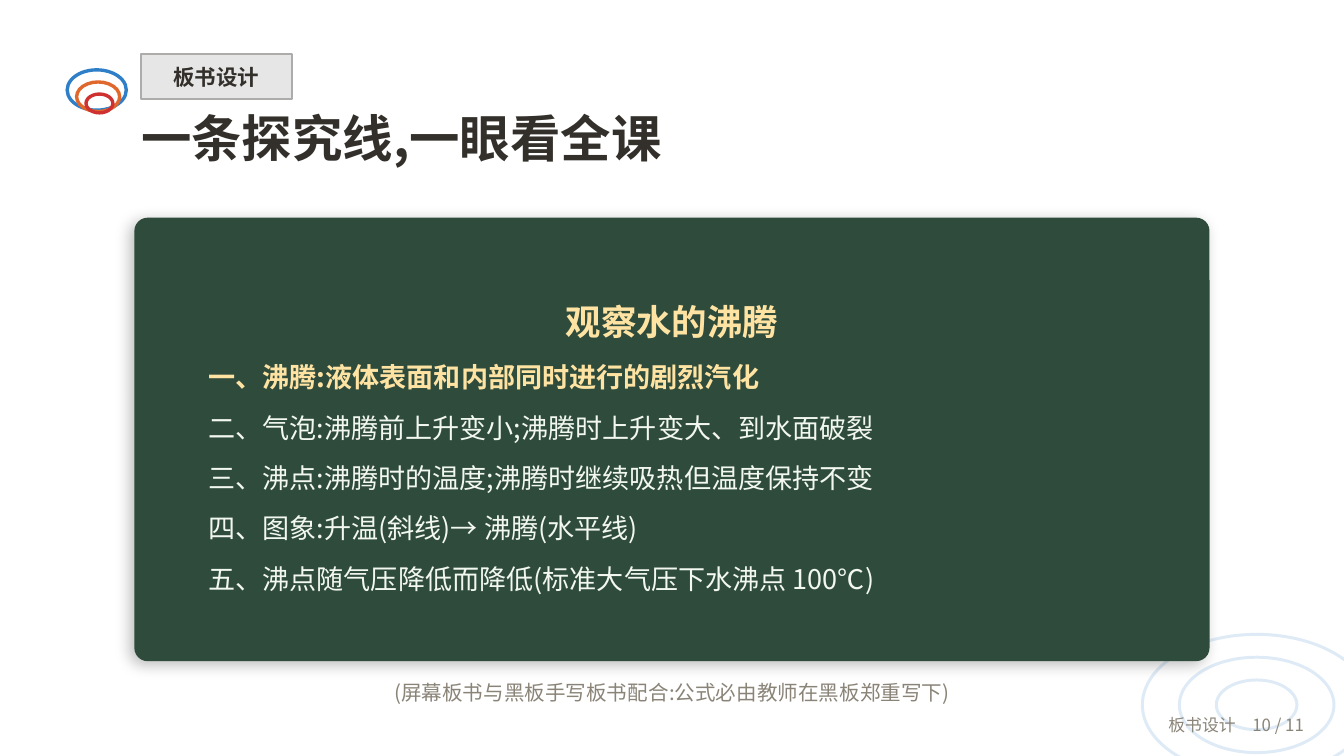
from lxml import etree
from pptx import Presentation
from pptx.dml.color import RGBColor
from pptx.enum.shapes import MSO_SHAPE
from pptx.enum.text import MSO_ANCHOR, MSO_AUTO_SIZE, PP_ALIGN
from pptx.oxml import parse_xml
from pptx.oxml.ns import nsdecls, qn
from pptx.util import Inches, Pt

ELLIPSE, RECTANGLE, ROUNDED = MSO_SHAPE.OVAL, MSO_SHAPE.RECTANGLE, MSO_SHAPE.ROUNDED_RECTANGLE
TOP, MIDDLE = MSO_ANCHOR.TOP, MSO_ANCHOR.MIDDLE
LEFT, CENTER, RIGHT = PP_ALIGN.LEFT, PP_ALIGN.CENTER, PP_ALIGN.RIGHT
NO_AUTOFIT = MSO_AUTO_SIZE.NONE

FONT = "Noto Sans CJK SC"
INK = RGBColor(0x33, 0x30, 0x2B)
MUTED = RGBColor(0x8A, 0x84, 0x78)
TAG_FILL = RGBColor(0xE7, 0xE6, 0xE6)
TAG_LINE = RGBColor(0xAD, 0xAC, 0xAA)
BOARD_GREEN = RGBColor(0x2E, 0x4B, 0x3C)
CHALK_YELLOW = RGBColor(0xFF, 0xE3, 0xA3)
CHALK_WHITE = RGBColor(0xF2, 0xF7, 0xF0)
PALE_BLUE = RGBColor(0xDE, 0xEB, 0xF6)
BLUE = RGBColor(0x2F, 0x7F, 0xC8)
ORANGE = RGBColor(0xE0, 0x68, 0x2C)
RED = RGBColor(0xCF, 0x30, 0x30)

# A 16:9 slide on a square grid, 100 columns wide
presentation = Presentation()
presentation.slide_width = Inches(10)
presentation.slide_height = presentation.slide_width * 9 // 16
COLUMN = ROW = presentation.slide_width / 100
slide = presentation.slides.add_slide(presentation.slide_layouts[1])
shapes = slide.shapes


def place(shape, left, top, width, height):
    """Move a shape to grid columns and rows, and bring it to the front."""
    shape.left, shape.width = round(left * COLUMN), round(width * COLUMN)
    shape.top, shape.height = round(top * ROW), round(height * ROW)
    shapes.element.append(shape.element)


def write(shape, lines, *, size, color, bold=False, align=LEFT, anchor=MIDDLE,
          margins=None, spacing=None):
    """Fill a shape with one paragraph per line, all in the same format."""
    frame = shape.text_frame
    frame.text = "\n".join(lines)
    frame.word_wrap = True
    frame.auto_size = NO_AUTOFIT
    frame.vertical_anchor = anchor
    if margins is not None:
        frame.margin_left = frame.margin_right = margins
        frame.margin_top = frame.margin_bottom = margins
    for paragraph in frame.paragraphs:
        paragraph.alignment = align
        paragraph.space_before = Pt(0)
        if spacing:
            paragraph.line_spacing = spacing
        properties = paragraph._p.get_or_add_pPr()
        properties.set("marL", "0")
        properties.set("indent", "0")
        etree.SubElement(properties, qn("a:buNone"))
        for run in paragraph.runs:
            font = run.font
            font.name, font.size, font.bold = FONT, size, bold
            font.color.rgb = color
            east_asian = etree.Element(qn("a:ea"), typeface=FONT)
            run._r.rPr.find(qn("a:latin")).addnext(east_asian)


# Rings: corner decoration, then the emblem beside the title
rings = [
    (85, 47.2, 17, 10.5, PALE_BLUE, 1.6),
    (87.75, 48.9, 11.5, 7.1, PALE_BLUE, 1.6),
    (90.5, 50.6, 6, 3.7, PALE_BLUE, 1.6),
    (5, 5.2, 4.4, 3, BLUE, 1.8),
    (5.7, 6.1, 3.2, 2.2, ORANGE, 1.8),
    (6.4, 7, 2, 1.4, RED, 1.8),
]
for left, top, width, height, color, weight in rings:
    ring = shapes.add_shape(ELLIPSE, 0, 0, 0, 0)
    place(ring, left, top, width, height)
    ring.shadow.inherit = False
    ring.fill.background()
    ring.line.color.rgb = color
    ring.line.width = Pt(weight)

# Section tag and title
tag = shapes.add_shape(RECTANGLE, 0, 0, 0, 0)
place(tag, 10.5, 4, 11.2, 3.4)
tag.shadow.inherit = False
tag.fill.solid()
tag.fill.fore_color.rgb = TAG_FILL
tag.line.color.rgb = TAG_LINE
tag.line.width = Pt(1)
write(tag, ["板书设计"], size=Pt(11.5), color=INK, bold=True, align=CENTER, margins=0)

title = shapes.title
place(title, 10.5, 8, 84, 5.5)
write(title, ["一条探究线,一眼看全课"], size=Pt(27), color=INK, bold=True, anchor=TOP, margins=0)

# Blackboard with a soft shadow
board = shapes.add_shape(ROUNDED, 0, 0, 0, 0)
place(board, 10, 16.2, 80, 33)
board.adjustments[0] = 0.03
board.fill.solid()
board.fill.fore_color.rgb = BOARD_GREEN
board.line.fill.background()
board.shadow.inherit = False
board_effects = board.element.spPr.find(qn("a:effectLst"))
board_effects.append(parse_xml(
    f'<a:outerShdw {nsdecls("a")} blurRad="{Pt(8)}" dist="{Pt(3)}" dir="{135 * 60000}"'
    ' algn="bl" rotWithShape="0"><a:srgbClr val="000000"><a:alpha val="25000"/>'
    '</a:srgbClr></a:outerShdw>'))

body = slide.placeholders[1]
place(body, 14.5, 18.5, 71, 29)
write(body, [
    "观察水的沸腾",
    "一、沸腾:液体表面和内部同时进行的剧烈汽化",
    "二、气泡:沸腾前上升变小;沸腾时上升变大、到水面破裂",
    "三、沸点:沸腾时的温度;沸腾时继续吸热但温度保持不变",
    "四、图象:升温(斜线)→ 沸腾(水平线)",
    "五、沸点随气压降低而降低(标准大气压下水沸点 100℃)",
], size=Pt(14.5), color=CHALK_WHITE, spacing=Pt(27))
heading, key_point = body.text_frame.paragraphs[:2]
heading.alignment = CENTER
heading.runs[0].font.size = Pt(19)
for paragraph in (heading, key_point):
    paragraph.runs[0].font.bold = True
    paragraph.runs[0].font.color.rgb = CHALK_YELLOW

# Caption and page number
small_texts = [
    ("(屏幕板书与黑板手写板书配合:公式必由教师在黑板郑重写下)", (10, 50, 80, 3), 11, CENTER),
    ("板书设计　10 / 11", (80, 52.4, 18, 3), 9, RIGHT),
]
for text, area, size, align in small_texts:
    box = shapes.add_textbox(0, 0, 0, 0)
    place(box, *area)
    write(box, [text], size=Pt(size), color=MUTED, align=align)

presentation.save("out.pptx")
